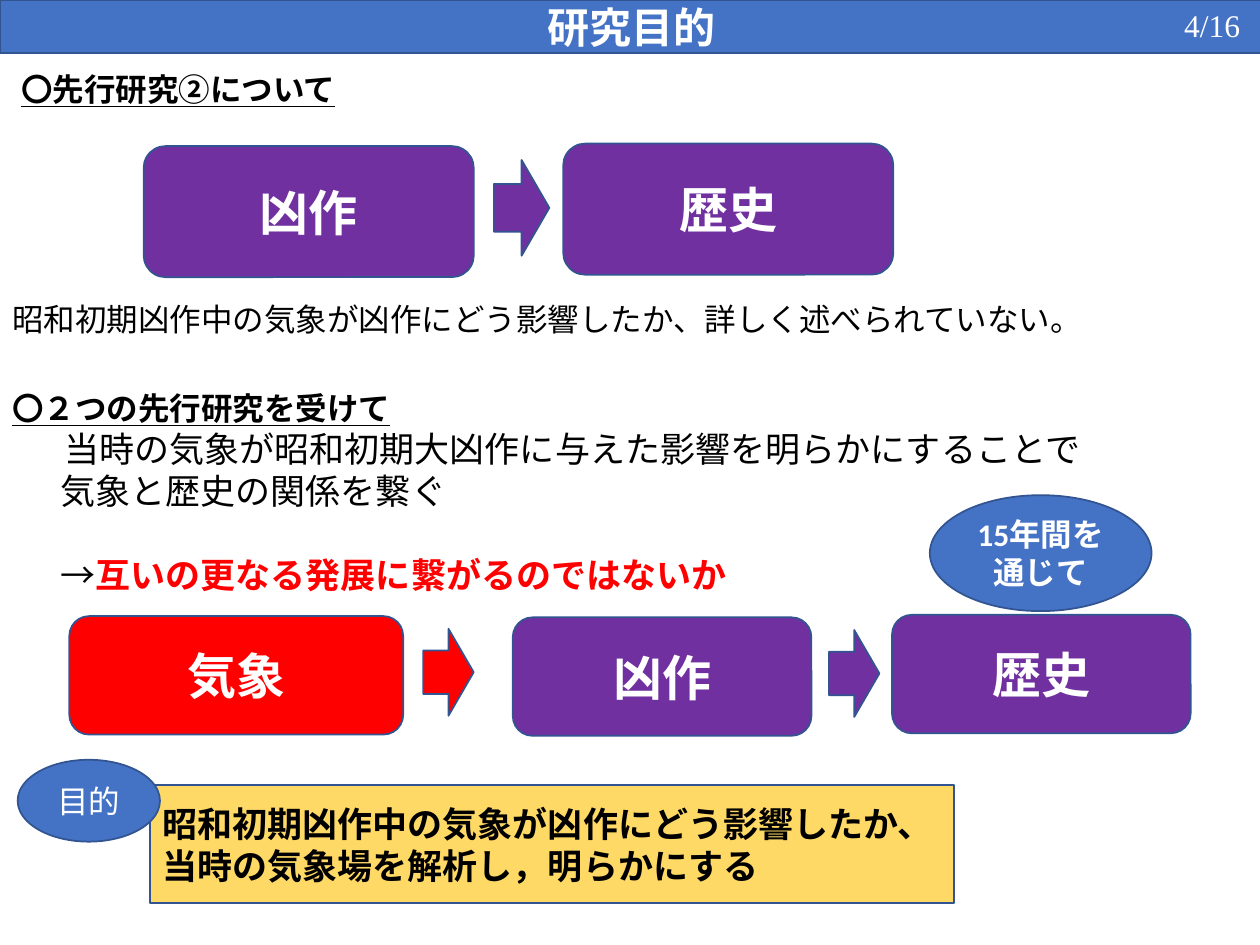
from dataclasses import dataclass

from pptx import Presentation
from pptx.dml.color import RGBColor
from pptx.enum.lang import MSO_LANGUAGE_ID
from pptx.enum.shapes import MSO_SHAPE
from pptx.enum.text import MSO_ANCHOR, MSO_AUTO_SIZE, PP_ALIGN
from pptx.util import Inches, Pt

ROUND, ARROW, OVAL = MSO_SHAPE.ROUNDED_RECTANGLE, MSO_SHAPE.RIGHT_ARROW, MSO_SHAPE.OVAL
LEFT, CENTER = PP_ALIGN.LEFT, PP_ALIGN.CENTER
TOP, MIDDLE = MSO_ANCHOR.TOP, MSO_ANCHOR.MIDDLE
FIXED = MSO_AUTO_SIZE.NONE
JAPAN = MSO_LANGUAGE_ID.JAPANESE
COLS, ROWS = 100, 75
WIDTH, HEIGHT = Inches(10), Inches(7.5)


@dataclass(frozen=True)
class Theme:
    blue: str = "4472C4"
    edge: str = "325491"
    purple: str = "7030A0"
    red: str = "FF0000"
    gold: str = "FFD966"
    white: str = "FFFFFF"
    black: str = "000000"
    font: str = "Calibri"
    serif: str = "Times New Roman"
    head: int = 24
    block: int = 28
    lead: int = 20
    body: int = 18


T = Theme()


@dataclass(frozen=True)
class Box:
    col: float
    row: float
    wide: float
    high: float

    def place(self) -> tuple[int, int, int, int]:
        across, down = WIDTH / COLS, HEIGHT / ROWS
        return (round(self.col * across), round(self.row * down),
                round(self.wide * across), round(self.high * down))


@dataclass(frozen=True)
class Style:
    size: int = T.body
    color: str = T.black
    bold: bool = False
    under: bool = False
    font: str = T.font
    align: PP_ALIGN = LEFT


@dataclass(frozen=True)
class Block:
    kind: MSO_SHAPE
    box: Box
    fill: str
    text: str = ""
    style: Style = Style(T.block, T.white, True, align=CENTER)


@dataclass(frozen=True)
class Note:
    box: Box
    lines: tuple[str, ...]
    style: Style
    anchor: MSO_ANCHOR = TOP


def paint(shape, fill: str) -> None:
    shape.fill.solid()
    shape.fill.fore_color.rgb = RGBColor.from_string(fill)
    shape.line.color.rgb = RGBColor.from_string(T.edge)
    shape.line.width = Pt(1)


def write(frame, lines: tuple[str, ...], style: Style, anchor: MSO_ANCHOR) -> None:
    frame.word_wrap = True
    frame.auto_size = FIXED
    frame.vertical_anchor = anchor
    frame.text = "\n".join(lines)
    for para in frame.paragraphs:
        para.alignment = style.align
        font = para.font
        font.name, font.size = style.font, Pt(style.size)
        font.bold, font.underline = style.bold, style.under
        font.color.rgb = RGBColor.from_string(style.color)
        for run in para.runs:
            run.font.language_id = JAPAN


def draw_block(slide, block: Block) -> None:
    shape = slide.shapes.add_shape(block.kind, *block.box.place())
    shape.shadow.inherit = False
    paint(shape, block.fill)
    if block.text:
        write(shape.text_frame, (block.text,), block.style, MIDDLE)


def draw_note(slide, note: Note):
    shape = slide.shapes.add_textbox(*note.box.place())
    write(shape.text_frame, note.lines, note.style, note.anchor)
    return shape


def draw_title(slide) -> None:
    title = slide.shapes.title
    title.left, title.top, title.width, title.height = Box(0, 0, 100.2, 4.2).place()
    paint(title, T.blue)
    write(title.text_frame, ("研究目的",), Style(T.head, T.white, True, align=CENTER), MIDDLE)


def draw_aim(slide) -> None:
    lines = ("当時の気象が昭和初期大凶作に与えた影響を明らかにすることで",
             "気象と歴史の関係を繋ぐ", "→")
    shape = draw_note(slide, Note(Box(2, 34.2, 97.1, 12.8), lines, Style(T.lead), MIDDLE))
    frame = shape.text_frame
    frame.margin_left = frame.margin_right = frame.margin_top = frame.margin_bottom = 0
    for para, indent in zip(frame.paragraphs, (0.03, 0, 0)):
        props = para._p.get_or_add_pPr()
        props.set("marL", str(Inches(0.28)))
        props.set("indent", str(Inches(indent)))
    last = frame.paragraphs[-1]
    last.space_before = Pt(T.lead * 1.2)
    run = last.add_run()
    run.text = "互いの更なる発展に繋がるのではないか"
    run.font.bold = True
    run.font.color.rgb = RGBColor.from_string(T.red)
    run.font.language_id = JAPAN


HEADING = Style(bold=True, under=True)
NOTES = (
    Note(Box(0, 23.3, 97.1, 4.5),
         ("昭和初期凶作中の気象が凶作にどう影響したか、詳しく述べられていない。",), Style()),
    Note(Box(0.7, 5.1, 30.1, 4), ("〇先行研究②について",), HEADING),
    Note(Box(0, 30.4, 42.9, 4), ("〇２つの先行研究を受けて",), HEADING),
    Note(Box(93, 0, 6.9, 4), ("4/16",), Style(color=T.white, font=T.serif)),
)
BLOCKS = (
    Block(ROUND, Box(11.4, 11.6, 26.2, 10.4), T.purple, "凶作"),
    Block(ROUND, Box(44.7, 11.4, 26.2, 10.4), T.purple, "歴史"),
    Block(ARROW, Box(39.2, 12.7, 4.4, 7.6), T.purple),
    Block(ROUND, Box(40.7, 49, 23.7, 9.4), T.purple, "凶作"),
    Block(ROUND, Box(70.8, 48.8, 23.7, 9.4), T.purple, "歴史"),
    Block(ARROW, Box(65.8, 50, 4, 6.9), T.purple),
    Block(ROUND, Box(5.5, 48.9, 26.5, 9.4), T.red, "気象"),
    Block(ARROW, Box(33.6, 49.9, 4, 6.9), T.red),
    Block(OVAL, Box(73.8, 39.3, 17.6, 9.2), T.blue, "15年間を通じて",
          Style(color=T.white, bold=True, align=CENTER)),
)
GOAL = Note(Box(11.9, 62.3, 63.8, 9.4),
            ("昭和初期凶作中の気象が凶作にどう影響したか、", "当時の気象場を解析し，明らかにする"),
            Style(T.lead, bold=True), MIDDLE)
LABEL = Block(OVAL, Box(1.4, 60.3, 11.3, 6.5), T.blue, "目的",
              Style(color=T.white, align=CENTER))


def main() -> None:
    deck = Presentation()
    deck.slide_width, deck.slide_height = WIDTH, HEIGHT
    slide = deck.slides.add_slide(deck.slide_layouts.get_by_name("Title Only"))
    draw_title(slide)
    for note in NOTES:
        draw_note(slide, note)
    draw_aim(slide)
    for block in BLOCKS:
        draw_block(slide, block)
    paint(draw_note(slide, GOAL), T.gold)
    draw_block(slide, LABEL)
    deck.save("out.pptx")


if __name__ == "__main__":
    main()
